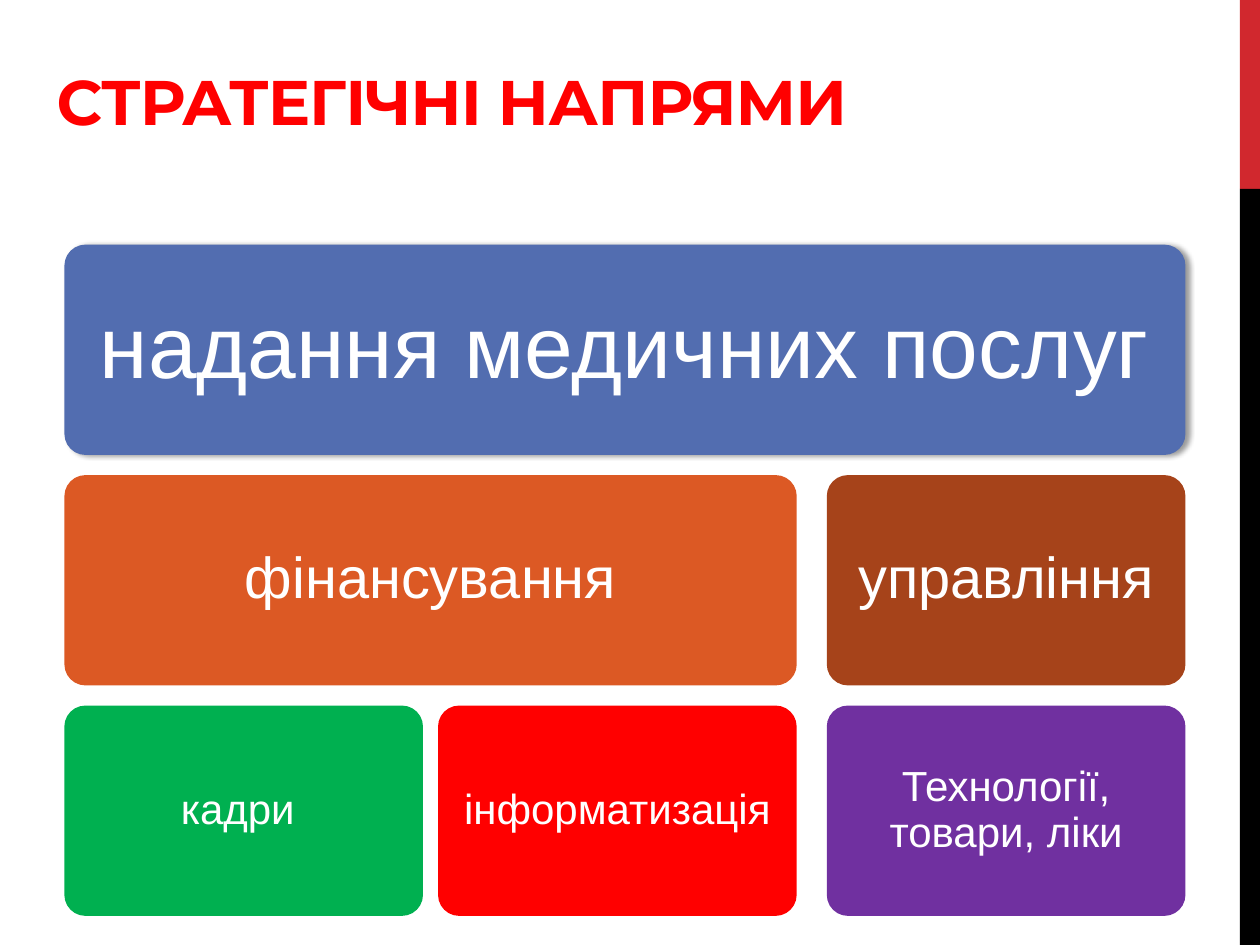
from lxml import etree
from pptx import Presentation
from pptx.dml.color import RGBColor
from pptx.enum import shapes, text
from pptx.oxml import ns
from pptx.util import Pt

WIDTH, HEIGHT = 720, 540
COLUMNS, ROWS = 3, 3
ROW_GAP, LEAF_GAP, BRANCH_GAP = 11.5, 8.6, 17.2

# label, fill, font size, row, first column, column span
BLOCKS = [
    ("надання медичних послуг", "526DB0", 50, 0, 0, 3),
    ("фінансування", "DC5924", 33, 1, 0, 2),
    ("кадри ", "00B050", 24, 2, 0, 1),
    ("інформатизація", "FF0000", 24, 2, 1, 1),
    ("управління", "A6431A", 33, 1, 2, 1),
    ("Технології, товари, ліки", "7030A0", 24, 2, 2, 1),
]


def rgb(value):
    return RGBColor.from_string(value)


def add_block(slide, kind, box, fill):
    sp = slide.shapes.add_shape(kind, *map(Pt, box))
    sp.shadow.inherit = False
    sp.fill.solid()
    sp.fill.fore_color.rgb = rgb(fill)
    sp.line.fill.background()
    return sp


def format_run(r, font, size, color):
    r.font.name = font
    r.font.size = Pt(size)
    r.font.color.rgb = rgb(color)


def add_shadow(sp, blur, dist, alpha):
    effects = sp._element.spPr.find(ns.qn("a:effectLst"))
    shadow = etree.SubElement(effects, ns.qn("a:outerShdw"), blurRad=str(Pt(blur)),
                              dist=str(Pt(dist)), dir="0", rotWithShape="0")
    color = etree.SubElement(shadow, ns.qn("a:srgbClr"), val="000000")
    etree.SubElement(color, ns.qn("a:alpha"), val=str(alpha * 1000))


def add_side_bar(slide, left, top, width, height):
    accent = height / 5
    rect = shapes.MSO_SHAPE.RECTANGLE
    add_block(slide, rect, (left, top, width, accent), "D1282E")
    add_block(slide, rect, (left, top + accent, width, height - accent), "000000")


def set_title(slide, left, top, width, height):
    title = slide.shapes.title
    title.left, title.top, title.width, title.height = map(Pt, (left, top, width, height))
    tf = title.text_frame
    tf.text = "СТРАТЕГІЧНІ НАПРЯМИ"
    tf.vertical_anchor = text.MSO_ANCHOR.BOTTOM
    tf.auto_size = text.MSO_AUTO_SIZE.NONE
    p = tf.paragraphs[0]
    p.alignment = text.PP_ALIGN.LEFT
    r = p.runs[0]
    format_run(r, "Montserrat", 36, "FF0000")
    r.font.bold = True
    r._r.get_or_add_rPr().set("spc", "-60")


def add_label(sp, label, size):
    tf = sp.text_frame
    tf.text = label
    tf.word_wrap = True
    tf.vertical_anchor = text.MSO_ANCHOR.MIDDLE
    tf.margin_left = tf.margin_right = tf.margin_top = tf.margin_bottom = Pt(0.3 * size)
    p = tf.paragraphs[0]
    p.alignment = text.PP_ALIGN.CENTER
    p.line_spacing = 0.9
    format_run(p.runs[0], "Arial", size, "FFFFFF")


def add_hierarchy(slide, left, top, width, height):
    """Rows of blocks; the last column is a branch of its own, set off by a wider gap."""
    col_w = (width - LEAF_GAP - BRANCH_GAP) / COLUMNS
    row_h = (height - (ROWS - 1) * ROW_GAP) / ROWS
    starts = [0, col_w + LEAF_GAP, width - col_w]
    for label, fill, size, row, col, span in BLOCKS:
        block_w = starts[col + span - 1] + col_w - starts[col]
        box = (left + starts[col], top + row * (row_h + ROW_GAP), block_w, row_h)
        sp = add_block(slide, shapes.MSO_SHAPE.ROUNDED_RECTANGLE, box, fill)
        sp.adjustments[0] = 0.1
        add_label(sp, label, size)
        if row == 0:
            add_shadow(sp, blur=3.1, dist=1.8, alpha=40)


def main():
    prs = Presentation()
    prs.slide_width, prs.slide_height = Pt(WIDTH), Pt(HEIGHT)
    slide = prs.slides.add_slide(prs.slide_layouts[5])
    add_side_bar(slide, 708.5, 0, 11.5, HEIGHT)
    set_title(slide, 25.2, 37.4, 680.4, 45.4)
    add_hierarchy(slide, 36.8, 139.8, 640.6, 383.6)
    prs.save("out.pptx")


if __name__ == "__main__":
    main()
